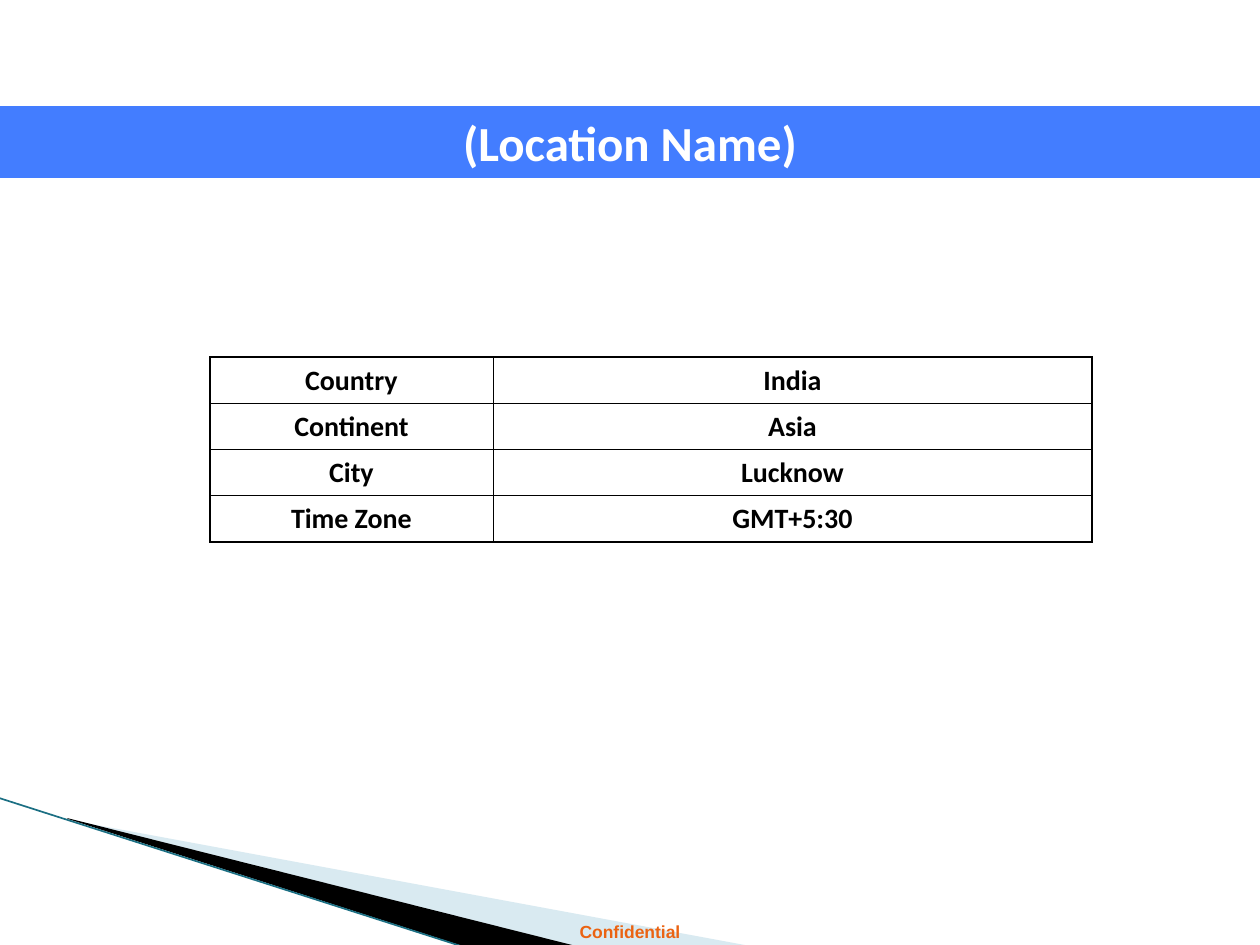
from lxml import etree
from pptx import Presentation
from pptx.dml.color import RGBColor
from pptx.enum.shapes import MSO_CONNECTOR, MSO_SHAPE
from pptx.enum.text import MSO_ANCHOR, PP_ALIGN
from pptx.oxml import parse_xml
from pptx.oxml.ns import nsdecls, qn
from pptx.util import Pt

PX = 914400 / 126
WIDTH, HEIGHT = 1260, 945

WHITE = RGBColor(0xFF, 0xFF, 0xFF)
BLACK = RGBColor(0x00, 0x00, 0x00)
BLUE = RGBColor(0x43, 0x7D, 0xFF)
PALE_BLUE = RGBColor(0xA0, 0xCB, 0xDC)
TEAL = RGBColor(0x1B, 0x6F, 0x83)
ORANGE = RGBColor(0xEB, 0x63, 0x12)

LOCATION = [
    ("Country", "India"),
    ("Continent", "Asia"),
    ("City", "Lucknow"),
    ("Time Zone", "GMT+5:30"),
]


def emu(*lengths):
    return [round(length * PX) for length in lengths]


def write(text_frame, text, font_name, size, color):
    """Set one centred bold paragraph."""
    text_frame.text = text
    paragraph = text_frame.paragraphs[0]
    paragraph.alignment = PP_ALIGN.CENTER
    font = paragraph.runs[0].font
    font.name, font.size, font.bold = font_name, Pt(size), True
    font.color.rgb = color


def add_wedge(slide, left, top, points, color, alpha=None):
    start, *others = [(left + x, top + y) for x, y in points]
    builder = slide.shapes.build_freeform(*start, scale=PX)
    builder.add_line_segments(others, close=True)
    shape = builder.convert_to_shape()
    shape.shadow.inherit = False
    shape.fill.solid()
    shape.fill.fore_color.rgb = color
    shape.line.fill.background()
    if alpha is not None:
        color_element = shape.fill._xPr.find(f"{qn('a:solidFill')}/{qn('a:srgbClr')}")
        etree.SubElement(color_element, qn("a:alpha"), val=str(alpha * 1000))


def add_corner(slide, left, top):
    """Draw the wedges and the edge line at the lower left."""
    add_wedge(slide, left, top, [(69, 22), (750, 148), (575, 148), (69, 21)], PALE_BLUE, 40)
    add_wedge(slide, left, top, [(67, 20), (576, 148), (469, 150), (68, 21)], BLACK)
    edge = slide.shapes.add_connector(
        MSO_CONNECTOR.STRAIGHT, *emu(left - 1, top, left + 467, top + 150))
    edge.line.color.rgb = TEAL
    edge.line.width = Pt(0.95)
    etree.SubElement(edge._element.spPr, qn("a:effectLst"))


def add_footer(slide, left, top, width, height):
    box = slide.shapes.add_textbox(*emu(left, top, width, height))
    box.text_frame.word_wrap = True
    write(box.text_frame, "Confidential", "Arial", 10, ORANGE)


def add_title_band(slide, left, top, width, height):
    band = slide.shapes.add_shape(MSO_SHAPE.RECTANGLE, *emu(left, top, width, height))
    band.shadow.inherit = False
    band.fill.solid()
    band.fill.fore_color.rgb = BLUE
    band.line.fill.background()
    band.text_frame.vertical_anchor = MSO_ANCHOR.TOP
    write(band.text_frame, "(Location Name)", "Calibri", 28, WHITE)


def set_borders(cell, widths):
    """Draw left, right, top and bottom borders of the given point widths."""
    properties = cell._tc.get_or_add_tcPr()
    for index, (side, width) in enumerate(zip("LRTB", widths)):
        properties.insert(index, parse_xml(
            f'<a:ln{side} {nsdecls("a")} w="{Pt(width)}"><a:solidFill>'
            f'<a:srgbClr val="{BLACK}"/></a:solidFill></a:ln{side}>'))


def add_location_table(slide, left, top, width, height):
    last_row, last_column = len(LOCATION) - 1, 1
    table = slide.shapes.add_table(
        len(LOCATION), 2, *emu(left, top, width, height)).table
    label_width = 283
    table.columns[0].width, table.columns[1].width = emu(label_width, width - label_width)
    for r, texts in enumerate(LOCATION):
        for c, text in enumerate(texts):
            cell = table.cell(r, c)
            cell.fill.background()
            cell.vertical_anchor = MSO_ANCHOR.MIDDLE
            write(cell.text_frame, text, "Calibri", 16, BLACK)
            outer = (c == 0, c == last_column, r == 0, r == last_row)
            set_borders(cell, [1 if is_outer else 0.5 for is_outer in outer])


def main():
    presentation = Presentation()
    presentation.slide_width, presentation.slide_height = emu(WIDTH, HEIGHT)
    slide = presentation.slides.add_slide(presentation.slide_layouts[6])
    slide.background.fill.solid()
    slide.background.fill.fore_color.rgb = WHITE
    add_corner(slide, 0, 798)
    add_footer(slide, 0, 915, WIDTH, 34)
    add_title_band(slide, 0, 106, WIDTH, 72)
    add_location_table(slide, 210, 357, 882, 184)
    presentation.save("out.pptx")


if __name__ == "__main__":
    main()
